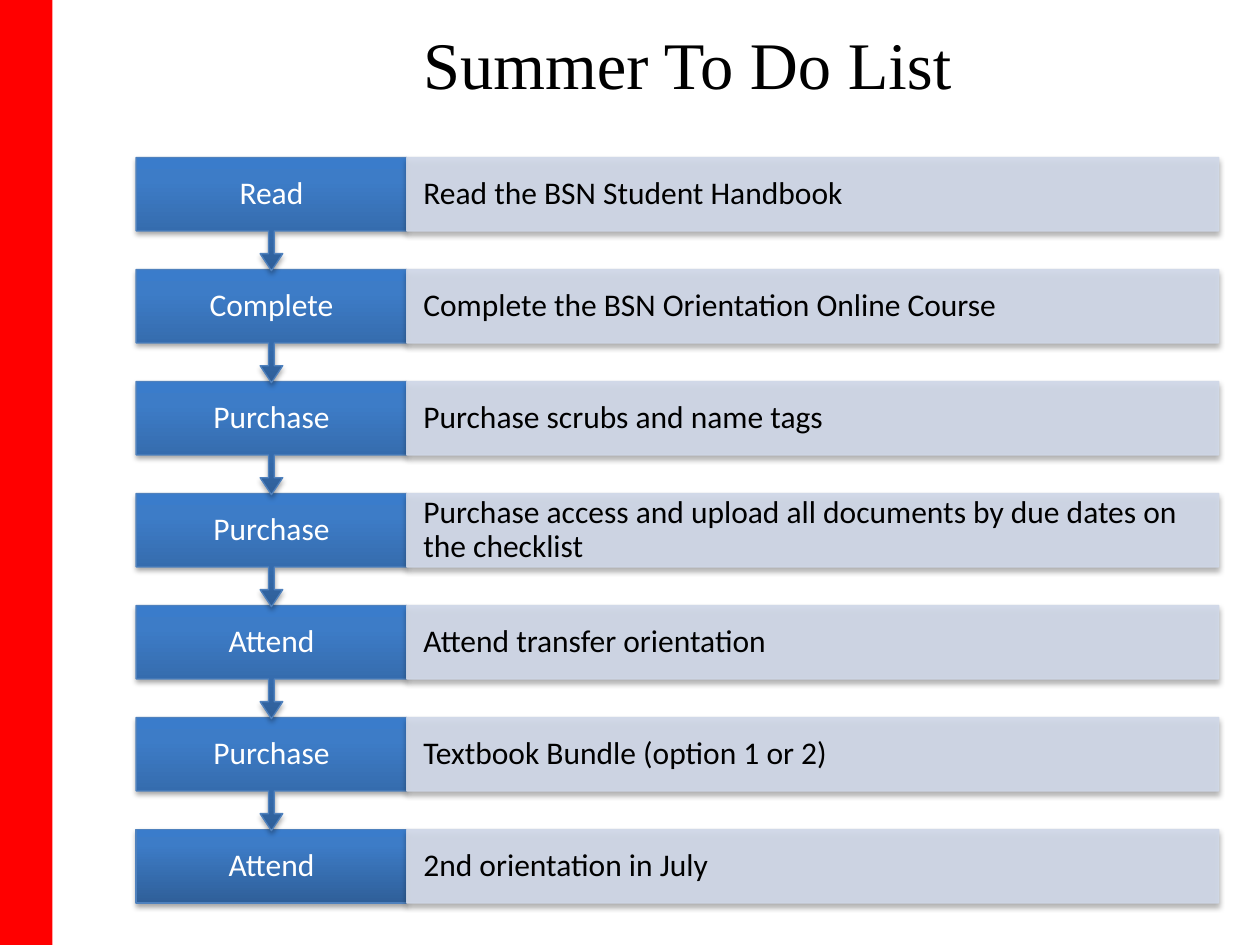
from dataclasses import dataclass

from lxml.etree import SubElement
from pptx import Presentation
from pptx.dml.color import RGBColor
from pptx.enum.shapes import MSO_SHAPE
from pptx.enum.text import MSO_ANCHOR, PP_ALIGN
from pptx.oxml.ns import qn
from pptx.util import Pt


@dataclass(frozen=True)
class Theme:
    accent: str = "FF0000"
    ink: str = "000000"
    label_ink: str = "FFFFFF"
    label_line: str = "4F81BD"
    label_stops: tuple = ((0, "2F5F99"), (80, "3D7CC7"), (100, "3A7CCB"))
    detail: str = "D0D8E8"
    detail_opacity: int = 90
    shadow_opacity: int = 35
    title_font: str = "Times New Roman"
    body_font: str = "Calibri"
    title_size: int = 38
    body_size: int = 18


@dataclass(frozen=True)
class Box:
    left: float
    top: float
    width: float
    height: float

    def lengths(self):
        return [Pt(side) for side in (self.left, self.top, self.width, self.height)]


THEME = Theme()
STEPS = [
    ("Read", "Read the BSN Student Handbook"),
    ("Complete", "Complete the BSN Orientation Online Course"),
    ("Purchase", "Purchase scrubs and name tags"),
    ("Purchase", "Purchase access and upload all documents by due dates on the checklist"),
    ("Attend", "Attend transfer orientation"),
    ("Purchase", "Textbook Bundle (option 1 or 2)"),
    ("Attend", "2nd orientation in July"),
]


def write(shape, text, *, font=THEME.body_font, size=THEME.body_size, color=THEME.ink,
          align=PP_ALIGN.LEFT, anchor=MSO_ANCHOR.MIDDLE, spacing=0.9, side=0):
    frame = shape.text_frame
    frame.word_wrap = True
    frame.vertical_anchor = anchor
    frame.margin_left = frame.margin_right = Pt(side)
    frame.margin_top = frame.margin_bottom = Pt(0)
    frame.text = text
    paragraph = frame.paragraphs[0]
    paragraph.alignment = align
    paragraph.line_spacing = spacing
    paragraph.font.name = font
    paragraph.font.size = Pt(size)
    paragraph.font.color.rgb = RGBColor.from_string(color)


def add_block(slide, box, color, line_color=None, preset=MSO_SHAPE.RECTANGLE):
    block = slide.shapes.add_shape(preset, *box.lengths())
    block.shadow.inherit = False
    block.fill.solid()
    block.fill.fore_color.rgb = RGBColor.from_string(color)
    if line_color:
        block.line.color.rgb = RGBColor.from_string(line_color)
        block.line.width = Pt(0.75)
    else:
        block.line.fill.background()
    return block


def set_opacity(color_element, percent):
    SubElement(color_element, qn("a:alpha"), val=str(percent * 1000))


def add_shadow(block):
    effects = block._element.spPr.find(qn("a:effectLst"))
    shadow = SubElement(effects, qn("a:outerShdw"), blurRad=str(Pt(3.1)),
                        dist=str(Pt(1.8)), dir="5400000", rotWithShape="0")
    set_opacity(SubElement(shadow, qn("a:srgbClr"), val=THEME.ink), THEME.shadow_opacity)


def shade_label(block):
    block.fill.gradient()
    gradient = block._element.spPr.find(qn("a:gradFill"))
    for child in list(gradient):
        gradient.remove(child)
    stops = SubElement(gradient, qn("a:gsLst"))
    for position, color in THEME.label_stops:
        stop = SubElement(stops, qn("a:gs"), pos=str(position * 1000))
        SubElement(stop, qn("a:srgbClr"), val=color)
    SubElement(gradient, qn("a:lin"), ang="16200000", scaled="0")


def place_title(slide, box, text):
    title = slide.shapes.title
    title.left, title.top, title.width, title.height = box.lengths()
    write(title, text, font=THEME.title_font, size=THEME.title_size,
          align=PP_ALIGN.CENTER, anchor=MSO_ANCHOR.TOP, spacing=1.0)


def add_label(slide, box, text, arrow_height):
    preset = MSO_SHAPE.DOWN_ARROW_CALLOUT if arrow_height else MSO_SHAPE.RECTANGLE
    outline = Box(box.left, box.top, box.width, box.height + arrow_height)
    label = add_block(slide, outline, THEME.label_line, THEME.label_line, preset)
    if arrow_height:
        for index, share in enumerate((0.05, 0.1, 0.15, box.height / outline.height)):
            label.adjustments[index] = share
    shade_label(label)
    add_shadow(label)
    write(label, text, color=THEME.label_ink, align=PP_ALIGN.CENTER, side=10.8)


def add_detail(slide, box, text):
    detail = add_block(slide, box, THEME.detail, THEME.detail)
    for color in detail._element.spPr.iter(qn("a:srgbClr")):
        set_opacity(color, THEME.detail_opacity)
    add_shadow(detail)
    write(detail, text, side=9.5)


def add_steps(slide, box, steps):
    row_height = 42
    last = len(steps) - 1
    pitch = (box.height - row_height) / last
    label_width = box.width / 4
    for row in range(last, -1, -1):
        action, task = steps[row]
        top = box.top + row * pitch
        arrow_height = 0 if row == last else pitch - row_height + 0.7
        add_label(slide, Box(box.left, top, label_width, row_height), action, arrow_height)
        add_detail(slide, Box(box.left + label_width, top, box.width - label_width, row_height), task)


def main():
    deck = Presentation()
    deck.slide_width, deck.slide_height = Pt(720), Pt(540)
    slide = deck.slides.add_slide(deck.slide_layouts[5])
    add_block(slide, Box(0, 0, 30, 540), THEME.accent)
    place_title(slide, Box(175, 13, 435.6, 93.6), "Summer To Do List")
    add_steps(slide, Box(77.8, 90, 618.6, 426), STEPS)
    deck.save("out.pptx")


if __name__ == "__main__":
    main()
